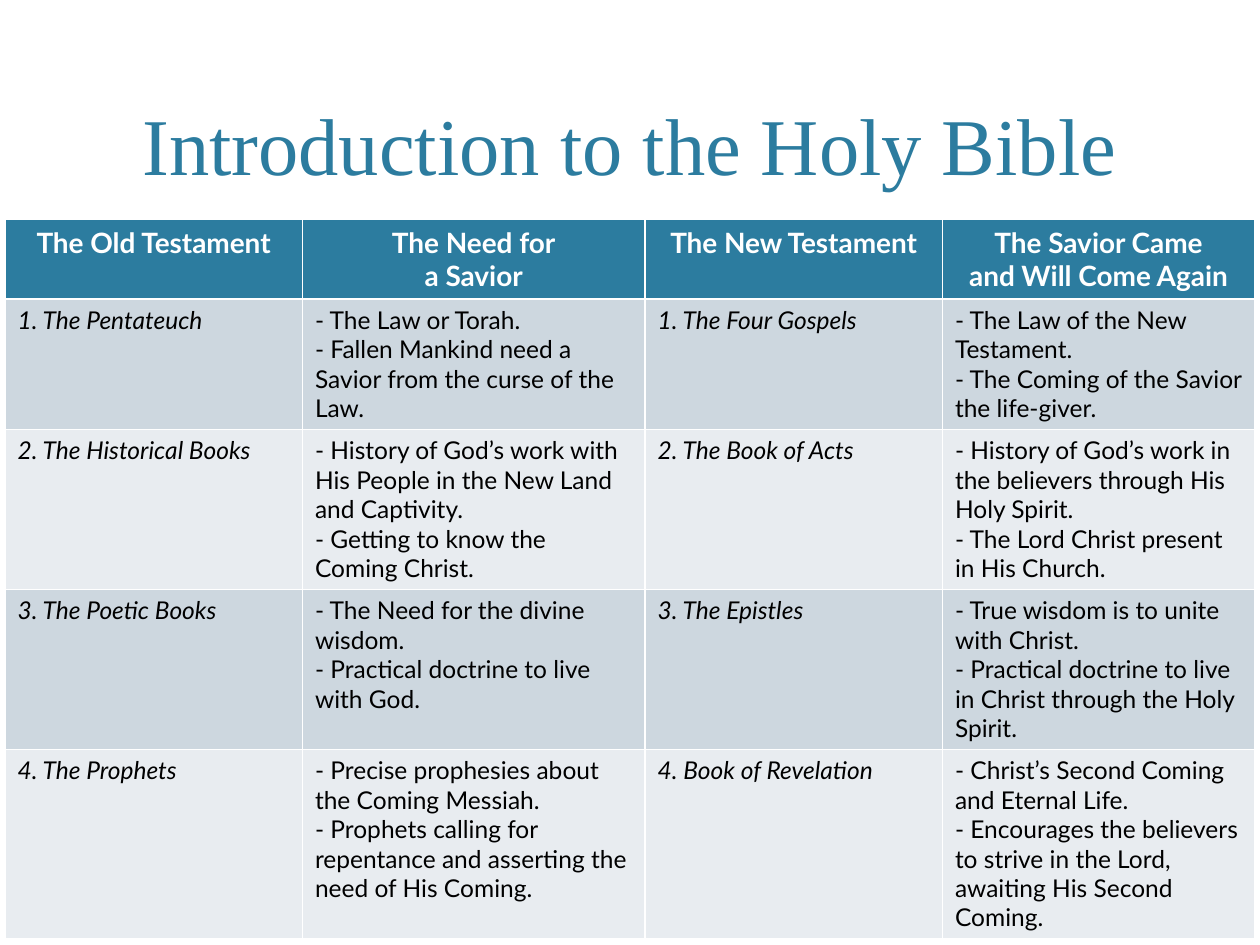
from pptx import Presentation
from pptx.dml.color import RGBColor
from pptx.enum.text import MSO_ANCHOR, PP_ALIGN
from pptx.util import Inches, Pt

CENTER, LEFT = PP_ALIGN.CENTER, PP_ALIGN.LEFT
BOTTOM = MSO_ANCHOR.BOTTOM
TEAL = RGBColor(0x2C, 0x7C, 0x9F)
WHITE = RGBColor(0xFF, 0xFF, 0xFF)
BLACK = RGBColor(0, 0, 0)
BANDS = RGBColor(0xCD, 0xD7, 0xDF), RGBColor(0xE8, 0xEC, 0xF0)

TITLE = "Introduction to the Holy Bible"
HEADS = [
    ["The Old Testament"],
    ["The Need for", "a Savior"],
    ["The New Testament"],
    ["The Savior Came", "and Will Come Again"],
]
BOOKS = [
    [["1. The Pentateuch"],
     ["- The Law or Torah.",
      "- Fallen Mankind need a Savior from the curse of the Law."],
     ["1. The Four Gospels"],
     ["- The Law of the New Testament.",
      "- The Coming of the Savior the life-giver."]],
    [["2. The Historical Books"],
     ["- History of God’s work with His People in the New Land and Captivity.",
      "- Getting to know the Coming Christ."],
     ["2. The Book of Acts"],
     ["- History of God’s work in the believers through His Holy Spirit.",
      "- The Lord Christ present in His Church."]],
    [["3. The Poetic Books"],
     ["- The Need for the divine wisdom.",
      "- Practical doctrine to live with God."],
     ["3. The Epistles"],
     ["- True wisdom is to unite with Christ.",
      "- Practical doctrine to live in Christ through the Holy Spirit."]],
    [["4. The Prophets"],
     ["- Precise prophesies about the Coming Messiah.",
      "- Prophets calling for repentance and asserting the need of His Coming."],
     ["4. Book of Revelation"],
     ["- Christ’s Second Coming and Eternal Life.",
      "- Encourages the believers to strive in the Lord, "
      "awaiting His Second Coming."]],
]
WIDTHS = [2.36, 2.72, 2.36, 2.48]
HEIGHTS = [0.63, 1.03, 1.27, 1.27, 1.5]


def write(frame, lines, face, size, color, align=LEFT, bold=False, italic=False):
    frame.text = "\n".join(lines)
    for para in frame.paragraphs:
        para.alignment = align
        font = para.font
        font.name, font.size, font.color.rgb = face, Pt(size), color
        font.bold, font.italic = bold, italic


def add_title(slide):
    box = slide.shapes.add_textbox(
        Inches(0.37), Inches(0.11), Inches(9.25), Inches(1.46))
    frame = box.text_frame
    frame.word_wrap = True
    frame.vertical_anchor = BOTTOM
    write(frame, [TITLE], "Times New Roman", 46, TEAL, CENTER)


def add_books(slide):
    rows = [HEADS] + BOOKS
    table = slide.shapes.add_table(
        len(rows), len(WIDTHS), Inches(0.04), Inches(1.74),
        Inches(sum(WIDTHS)), Inches(sum(HEIGHTS))).table
    for col, width in zip(table.columns, WIDTHS):
        col.width = Inches(width)
    for r, (row, height) in enumerate(zip(rows, HEIGHTS)):
        table.rows[r].height = Inches(height)
        for c, lines in enumerate(row):
            cell = table.cell(r, c)
            cell.fill.solid()
            if r == 0:
                cell.fill.fore_color.rgb = TEAL
                write(cell.text_frame, lines, "Lato", 16, WHITE, CENTER, bold=True)
            else:
                cell.fill.fore_color.rgb = BANDS[(r - 1) % 2]
                write(cell.text_frame, lines, "Lato", 14, BLACK, italic=c % 2 == 0)


def main():
    deck = Presentation()
    deck.slide_width, deck.slide_height = Inches(10), Inches(7.5)
    slide = deck.slides.add_slide(deck.slide_layouts[6])
    add_title(slide)
    add_books(slide)
    deck.save("out.pptx")


if __name__ == "__main__":
    main()
